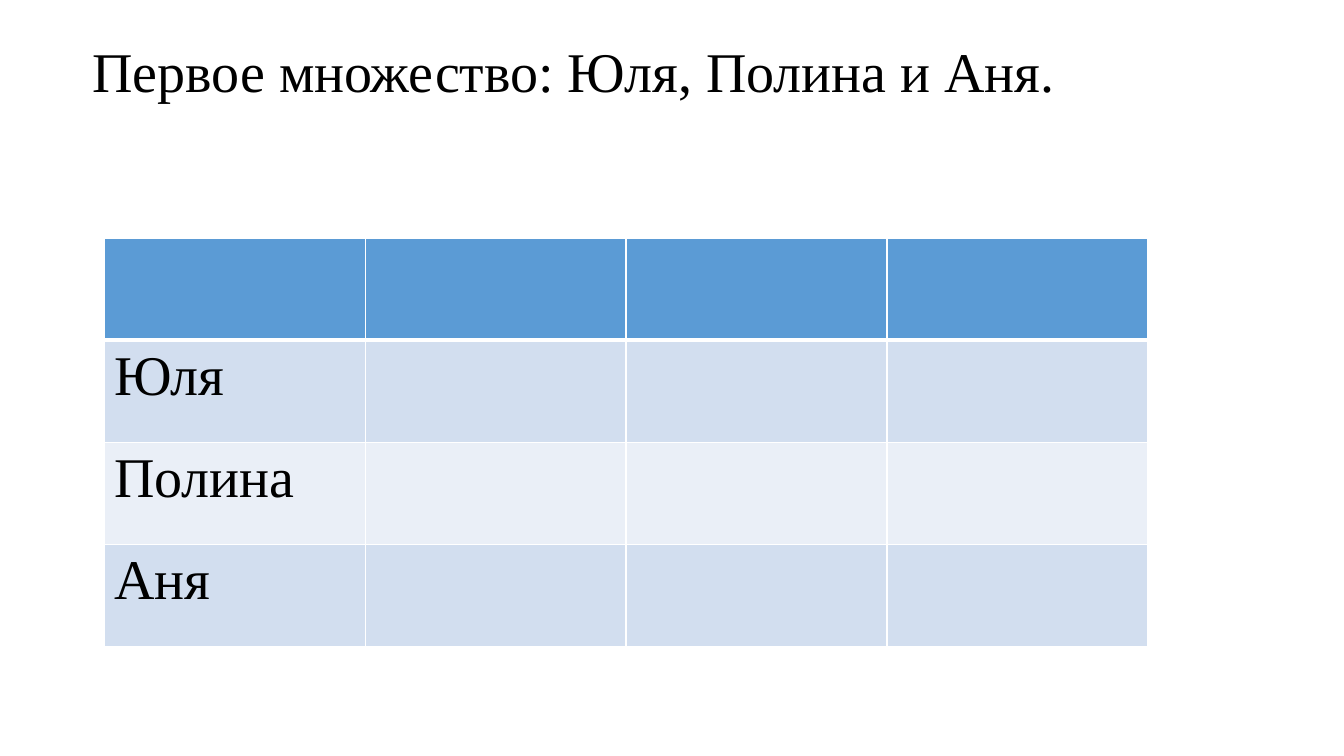
import pptx
import pptx.dml.color
import pptx.enum.text
import pptx.oxml
import pptx.oxml.ns
import pptx.util

Pt = pptx.util.Pt

COLORS = {
    "text": "000000",
    "border": "FFFFFF",
    "header": "5B9BD5",
    "odd_row": "D2DEEF",
    "even_row": "EAEFF7",
}
NAMES = ["Юля", "Полина", "Аня"]


class SlideBuilder:
    font_name = "Times New Roman"
    font_size = 40

    def __init__(self, slide):
        self.slide = slide

    def color(self, name):
        return pptx.dml.color.RGBColor.from_string(COLORS[name])

    def fill_paragraph(self, paragraph, text):
        paragraph.text = text
        paragraph.font.name = self.font_name
        paragraph.font.size = Pt(self.font_size)
        paragraph.font.color.rgb = self.color("text")

    def text(self, text, left, top, width, height):
        shape = self.slide.shapes.add_textbox(Pt(left), Pt(top), Pt(width), Pt(height))
        shape.text_frame.word_wrap = True
        shape.text_frame.vertical_anchor = pptx.enum.text.MSO_ANCHOR.TOP
        paragraph = shape.text_frame.paragraphs[0]
        paragraph.line_spacing = 0.9
        paragraph.space_before = Pt(10)
        self.fill_paragraph(paragraph, text)

    def border(self, cell, side, width):
        cell._tc.get_or_add_tcPr().append(pptx.oxml.parse_xml(
            f'<a:ln{side} {pptx.oxml.ns.nsdecls("a")} w="{Pt(width)}">'
            f'<a:solidFill><a:srgbClr val="{COLORS["border"]}"/></a:solidFill>'
            f'</a:ln{side}>'
        ))

    def table(self, names, columns, left, top, width, height):
        rows = len(names) + 1
        shape = self.slide.shapes.add_table(
            rows, columns, Pt(left), Pt(top), Pt(width), Pt(height)
        )
        for row in range(rows):
            fill = "header" if row == 0 else "odd_row" if row % 2 else "even_row"
            for column in range(columns):
                cell = shape.table.cell(row, column)
                widths = {"L": 1, "R": 1, "T": 3 if row == 1 else 1, "B": 3 if row == 0 else 1}
                for side, line_width in widths.items():
                    self.border(cell, side, line_width)
                cell.fill.solid()
                cell.fill.fore_color.rgb = self.color(fill)
        for row, name in enumerate(names, start=1):
            self.fill_paragraph(shape.table.cell(row, 0).text_frame.paragraphs[0], name)


def main():
    presentation = pptx.Presentation()
    presentation.slide_width = Pt(960)
    presentation.slide_height = Pt(540)
    slide = presentation.slides.add_slide(presentation.slide_layouts[6])
    builder = SlideBuilder(slide)
    builder.text(" Первое множество: Юля, Полина и Аня.", 49, 28, 840, 284)
    builder.table(NAMES, 4, 74.4, 170.2, 745.6, 291.6)
    presentation.save("out.pptx")


if __name__ == "__main__":
    main()
